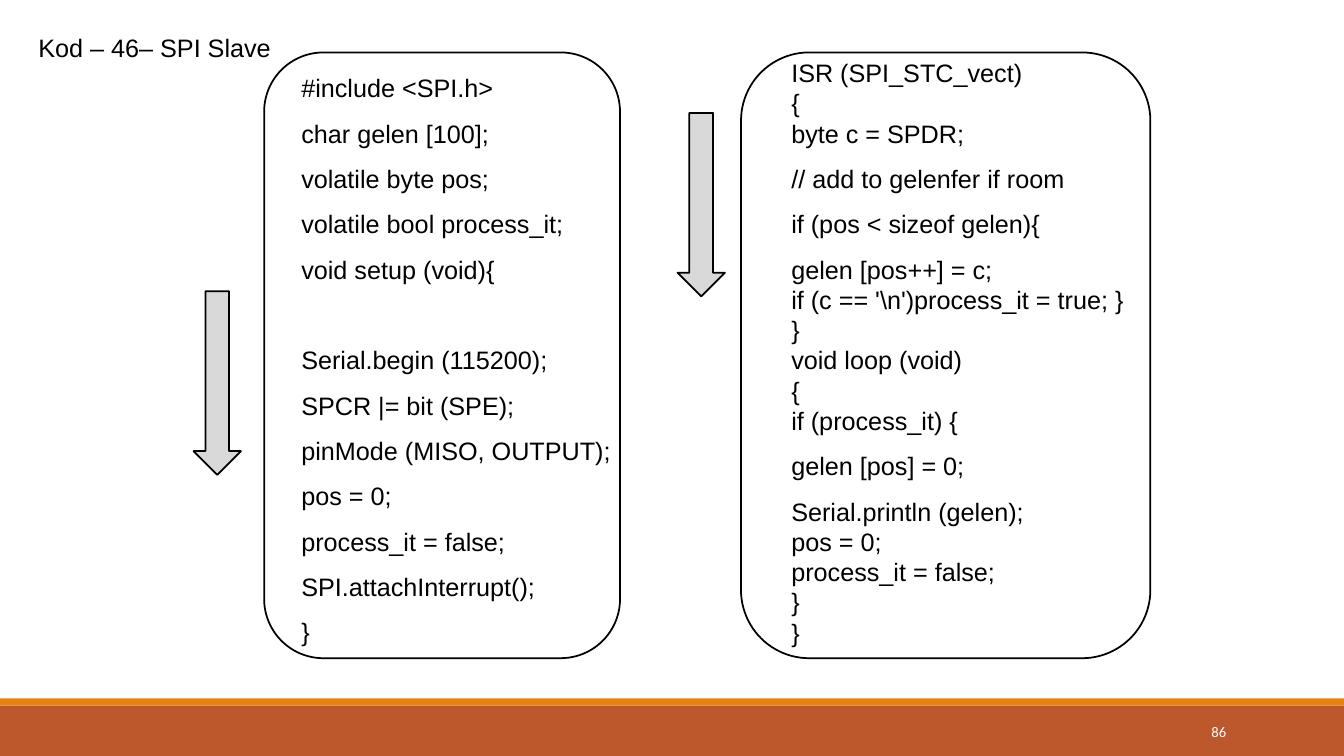
from dataclasses import dataclass

from pptx import Presentation
from pptx import util as u
from pptx.dml.color import RGBColor
from pptx.enum import shapes, text


@dataclass(frozen=True)
class Theme:
    ink: str = "000000"
    light: str = "FFFFFF"
    band: str = "BD582C"
    stripe: str = "E48312"
    arrow: str = "D9D9D9"
    code_font: str = "Arial"
    number_font: str = "Calibri"
    code_size: float = 18
    number_size: float = 10.5
    outline: float = 1.25
    loose: float = 1.5


SETUP_CODE = [
    (True, """#include <SPI.h>
char gelen [100];
volatile byte pos;
volatile bool process_it;
void setup (void){
Serial.begin (115200);
SPCR |= bit (SPE);
pinMode (MISO, OUTPUT);
pos = 0;
process_it = false;
SPI.attachInterrupt();
}"""),
]

LOOP_CODE = [
    (False, """ISR (SPI_STC_vect)
{
byte c = SPDR;"""),
    (True, """// add to gelenfer if room
if (pos < sizeof gelen){
gelen [pos++] = c;"""),
    (False, r"""if (c == '\n')process_it = true; }
}
void loop (void)
{
if (process_it) {"""),
    (True, """gelen [pos] = 0;
Serial.println (gelen);"""),
    (False, """pos = 0;
process_it = false;
}
}"""),
]


def assign(target, values):
    for name, value in values.items():
        setattr(target, name, value)


class Deck:
    def __init__(self, theme):
        self.theme = theme
        self.prs = Presentation()
        assign(self.prs, {"slide_width": u.Inches(13.33), "slide_height": u.Inches(7.5)})
        self.s = self.prs.slides.add_slide(self.prs.slide_layouts[5])

    def place(self, sp, box):
        assign(sp, dict(zip(("left", "top", "width", "height"), map(u.Inches, box))))

    def fill_line(self, p, content, font, size, color, **paragraph):
        assign(p, paragraph)
        r = p.add_run()
        r.text = content
        assign(r.font, {"name": font, "size": u.Pt(size)})
        r.font.color.rgb = RGBColor.from_string(color)

    def title(self, box, content):
        t = self.theme
        sp = self.s.shapes.title
        self.place(sp, box)
        tf = sp.text_frame
        assign(tf, {"word_wrap": False, "vertical_anchor": text.MSO_ANCHOR.TOP,
                    "auto_size": text.MSO_AUTO_SIZE.SHAPE_TO_FIT_TEXT})
        self.fill_line(tf.paragraphs[0], content, t.code_font, t.code_size, t.ink,
                       alignment=text.PP_ALIGN.LEFT)

    def shape(self, kind, box, fill=None, outlined=False):
        sp = self.s.shapes.add_shape(kind, *map(u.Inches, box))
        sp.shadow.inherit = False
        if fill:
            sp.fill.solid()
            sp.fill.fore_color.rgb = RGBColor.from_string(fill)
        else:
            sp.fill.background()
        if outlined:
            sp.line.width = u.Pt(self.theme.outline)
            sp.line.color.rgb = RGBColor.from_string(self.theme.ink)
        else:
            sp.line.fill.background()

    def text_box(self, box, **frame):
        tf = self.s.shapes.add_textbox(*map(u.Inches, box)).text_frame
        assign(tf, {"word_wrap": True, **frame})
        return tf

    def listing(self, box, blocks, gap_before=None):
        t = self.theme
        tf = self.text_box(box)
        lines = [(loose, line) for loose, block in blocks for line in block.splitlines()]
        for i, (loose, line) in enumerate(lines):
            p = tf.add_paragraph() if i else tf.paragraphs[0]
            spacing = {"line_spacing": t.loose if loose else 1.0}
            if line == gap_before:
                spacing["space_before"] = u.Pt(32.4)
            self.fill_line(p, line, t.code_font, t.code_size, t.ink, **spacing)

    def page_number(self, box, number):
        t = self.theme
        tf = self.text_box(box, vertical_anchor=text.MSO_ANCHOR.MIDDLE)
        self.fill_line(tf.paragraphs[0], number, t.number_font, t.number_size, t.light,
                       alignment=text.PP_ALIGN.RIGHT)


def main():
    theme = Theme()
    deck = Deck(theme)
    kind = shapes.MSO_SHAPE
    deck.shape(kind.RECTANGLE, (0, 7, 13.33, 0.5), theme.band)
    deck.shape(kind.RECTANGLE, (0, 6.93, 13.33, 0.07), theme.stripe)
    deck.page_number((10.83, 7.06, 1.43, 0.4), "86")
    deck.listing((2.89, 0.52, 3.67, 5.96), SETUP_CODE, "Serial.begin (115200);")
    deck.listing((7.75, 0.52, 3.67, 6.01), LOOP_CODE)
    for left, width in ((2.62, 3.53), (7.35, 4.06)):
        deck.shape(kind.ROUNDED_RECTANGLE, (left, 0.52, width, 6.01), outlined=True)
    deck.title((0.28, 0.27, 2.6, 0.4), "Kod – 46– SPI Slave")
    for left, top in ((1.92, 2.89), (6.72, 1.12)):
        deck.shape(kind.DOWN_ARROW, (left, top, 0.47, 1.82), theme.arrow, True)
    deck.prs.save("out.pptx")


if __name__ == "__main__":
    main()
